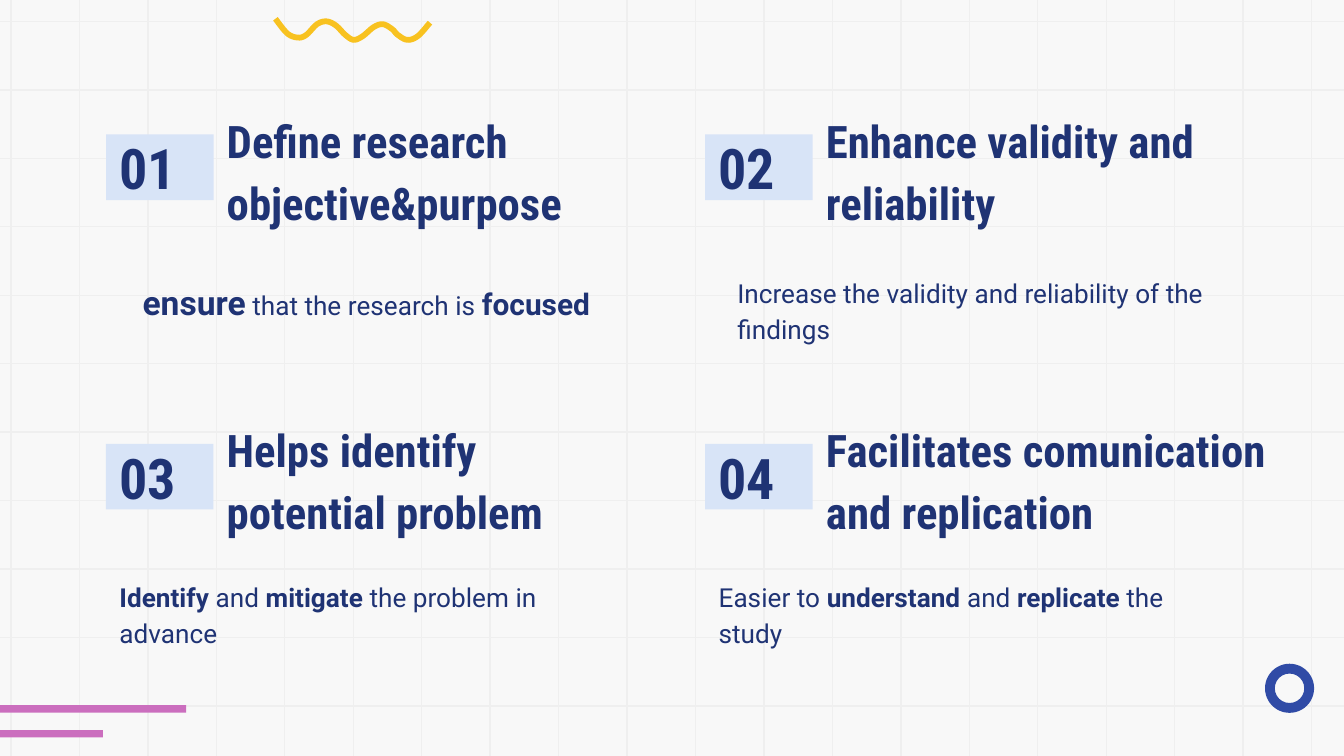
from dataclasses import dataclass
from math import hypot
from typing import NamedTuple

from lxml import etree
from pptx import Presentation
from pptx.dml.color import RGBColor
from pptx.enum import shapes, text
from pptx.oxml import ns
from pptx.util import Pt


@dataclass(frozen=True)
class Theme:
    paper: str = "F8F8F8"
    grid: str = "EFEFEF"
    ink: str = "1F3374"
    tile: str = "D8E4F7"
    bar: str = "CB6EBE"
    ring: str = "304BA6"
    wave: str = "F8C220"
    body_font: str = "Roboto"
    head_font: str = "Roboto Condensed"
    number_size: float = 30
    heading_size: float = 24
    strong_size: float = 18
    medium_size: float = 16
    body_size: float = 14


class Frame(NamedTuple):
    left: float
    top: float
    width: float
    height: float


class Span(NamedTuple):
    words: str
    bold: bool = False
    size: float = Theme.body_size
    font: str = Theme.body_font


@dataclass(frozen=True)
class Card:
    number: str
    heading: str
    detail: tuple[Span, ...]
    detail_left: float
    detail_top: float
    heading_width: float = 227.5


THEME = Theme()
WIDTH, HEIGHT = 720, 405
GRID_STEP = 36.67
GRID_LEFT, GRID_TOP = 5.9, 11.5
COLUMNS, ROWS = (56.8, 377.8), (72, 237.8)
TILE_WIDTH, TILE_HEIGHT = 57.6, 35.2
DETAIL_WIDTH, DETAIL_HEIGHT = 286, 28.8

CARDS = (
    Card("01", "Define research objective&purpose",
         (Span("ensure", True, THEME.strong_size), Span(" that the research is "),
          Span("focused", True, THEME.medium_size)), 69.2, 140.4),
    Card("02", "Enhance validity and reliability",
         (Span("Increase the validity and reliability of the findings"),), 387.8, 138.9),
    Card("03", "Helps identify potential problem",
         (Span("Identify ", True), Span("and "), Span("mitigate", True),
          Span(" the problem in advance")), COLUMNS[0], 302),
    Card("04", "Facilitates comunication and replication",
         (Span("Easier to "), Span("understand ", True), Span("and "),
          Span("replicate", True), Span(" the study")), COLUMNS[1], 302, 258.5),
)

BARS = (Frame(0, 377.8, 99.7, 4), Frame(0, 391.1, 55.1, 4))
RING = Frame(677.7, 355.6, 26.3, 26.3)
WAVE = (
    (147.6, 10.1), (154, 18), (159.8, 20.2), (164.2, 18.7), (169.9, 13), (175, 11.5),
    (180, 13.7), (185, 18.7), (189.5, 21.4), (194.4, 19.4), (200.2, 14.6), (205.2, 13),
    (210.2, 15.7), (213.1, 18.7), (218.2, 21.4), (223.9, 19.4), (230.4, 12.2),
)
WAVE_HALF_WIDTH = 1.55


def points(frame: Frame) -> list:
    return [Pt(value) for value in frame]


def paint(shape, color: str) -> None:
    shape.shadow.inherit = False
    shape.fill.solid()
    shape.fill.fore_color.rgb = RGBColor.from_string(color)
    shape.line.fill.background()


def draw_line(page, x1: float, y1: float, x2: float, y2: float) -> None:
    line = page.shapes.add_connector(
        shapes.MSO_CONNECTOR.STRAIGHT, Pt(x1), Pt(y1), Pt(x2), Pt(y2))
    line.line.color.rgb = RGBColor.from_string(THEME.grid)
    line.line.width = Pt(0.75)
    etree.SubElement(line._element.spPr, ns.qn("a:effectLst"))


def draw_grid(page) -> None:
    for row in range(11):
        y = GRID_TOP + row * GRID_STEP
        draw_line(page, 0, y, WIDTH, y)
    for column in range(20):
        x = GRID_LEFT + column * GRID_STEP
        draw_line(page, x, 0, x, HEIGHT)


def smooth(anchors: tuple, steps: int = 6) -> list[tuple[float, float]]:
    padded = (anchors[0], *anchors, anchors[-1])
    curve = []
    for before, start, end, after in zip(padded, padded[1:], padded[2:], padded[3:]):
        for step in range(steps):
            t = step / steps
            curve.append(tuple(
                b + t * (c - a) / 2 + t**2 * (2 * a - 5 * b + 4 * c - d) / 2
                + t**3 * (3 * b - a - 3 * c + d) / 2
                for a, b, c, d in zip(before, start, end, after)))
    return curve + [anchors[-1]]


def draw_wave(page) -> None:
    curve = smooth(WAVE)
    upper, lower = [], []
    for i, (x, y) in enumerate(curve):
        x1, y1 = curve[max(i - 1, 0)]
        x2, y2 = curve[min(i + 1, len(curve) - 1)]
        scale = WAVE_HALF_WIDTH / hypot(x2 - x1, y2 - y1)
        dx, dy = (y2 - y1) * scale, (x1 - x2) * scale
        upper.append((Pt(x + dx), Pt(y + dy)))
        lower.append((Pt(x - dx), Pt(y - dy)))
    outline = upper + lower[::-1]
    builder = page.shapes.build_freeform(*outline[0])
    builder.add_line_segments(outline[1:], close=True)
    paint(builder.convert_to_shape(), THEME.wave)


def draw_decorations(page) -> None:
    for bar in BARS:
        paint(page.shapes.add_shape(shapes.MSO_SHAPE.RECTANGLE, *points(bar)), THEME.bar)
    ring = page.shapes.add_shape(shapes.MSO_SHAPE.DONUT, *points(RING))
    ring.adjustments[0] = 0.2
    paint(ring, THEME.ring)
    draw_wave(page)


def write(box, frame: Frame, spans: tuple[Span, ...], spacing: float, anchor) -> None:
    box.left, box.top, box.width, box.height = points(frame)
    box._element.getparent().append(box._element)
    body = box.text_frame
    body.word_wrap = True
    body.auto_size = text.MSO_AUTO_SIZE.NONE
    body.vertical_anchor = anchor
    body.margin_left = body.margin_right = body.margin_top = body.margin_bottom = Pt(7.2)
    para = body.paragraphs[0]
    para.alignment = text.PP_ALIGN.LEFT
    para.line_spacing = spacing
    para.space_before = para.space_after = Pt(0)
    properties = para._p.get_or_add_pPr()
    properties.set("marL", "0")
    properties.set("indent", "0")
    etree.SubElement(properties, ns.qn("a:buNone"))
    for span in spans:
        run = para.add_run()
        run.text = span.words
        run.font.name = span.font
        run.font.size = Pt(span.size)
        run.font.bold = span.bold
        run.font.color.rgb = RGBColor.from_string(THEME.ink)


def draw_card(page, card: Card, left: float, top: float, tile, detail) -> None:
    middle = text.MSO_ANCHOR.MIDDLE
    paint(tile, THEME.tile)
    write(tile, Frame(left, top, TILE_WIDTH, TILE_HEIGHT),
          (Span(card.number, True, THEME.number_size, THEME.head_font),), 1, middle)
    place = Frame(left + TILE_WIDTH, top, card.heading_width, TILE_HEIGHT)
    write(page.shapes.add_textbox(*points(place)), place,
          (Span(card.heading, True, THEME.heading_size, THEME.head_font),), 1.15, middle)
    write(detail, Frame(card.detail_left, card.detail_top, DETAIL_WIDTH, DETAIL_HEIGHT),
          card.detail, 1.15, text.MSO_ANCHOR.TOP)


def main() -> None:
    deck = Presentation()
    deck.slide_width, deck.slide_height = Pt(WIDTH), Pt(HEIGHT)
    page = deck.slides.add_slide(deck.slide_layouts.get_by_name("Comparison"))
    page.background.fill.solid()
    page.background.fill.fore_color.rgb = RGBColor.from_string(THEME.paper)
    title, *details = list(page.placeholders)
    draw_grid(page)
    draw_decorations(page)
    for i, (card, detail) in enumerate(zip(CARDS, details)):
        left, top = COLUMNS[i % 2], ROWS[i // 2]
        tile = title if i == 0 else page.shapes.add_shape(
            shapes.MSO_SHAPE.RECTANGLE, *points(Frame(left, top, TILE_WIDTH, TILE_HEIGHT)))
        draw_card(page, card, left, top, tile, detail)
    deck.save("out.pptx")


if __name__ == "__main__":
    main()
